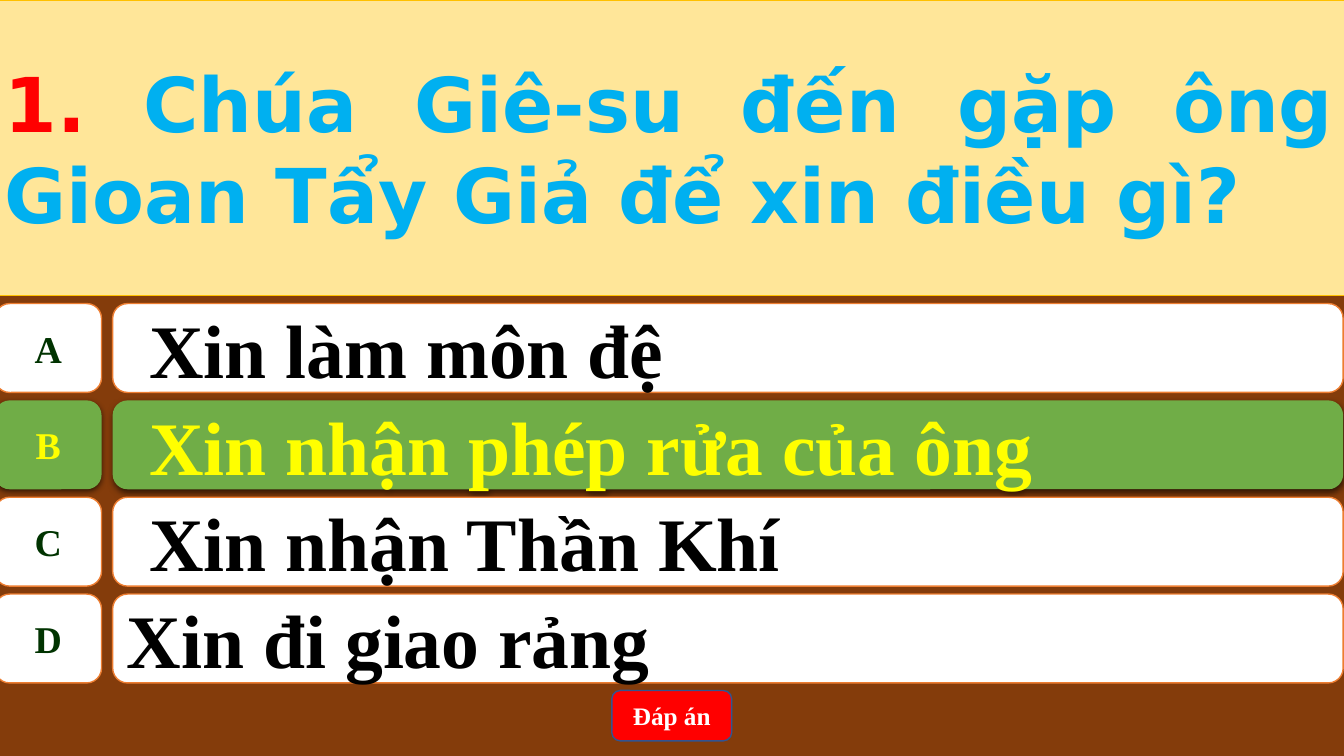
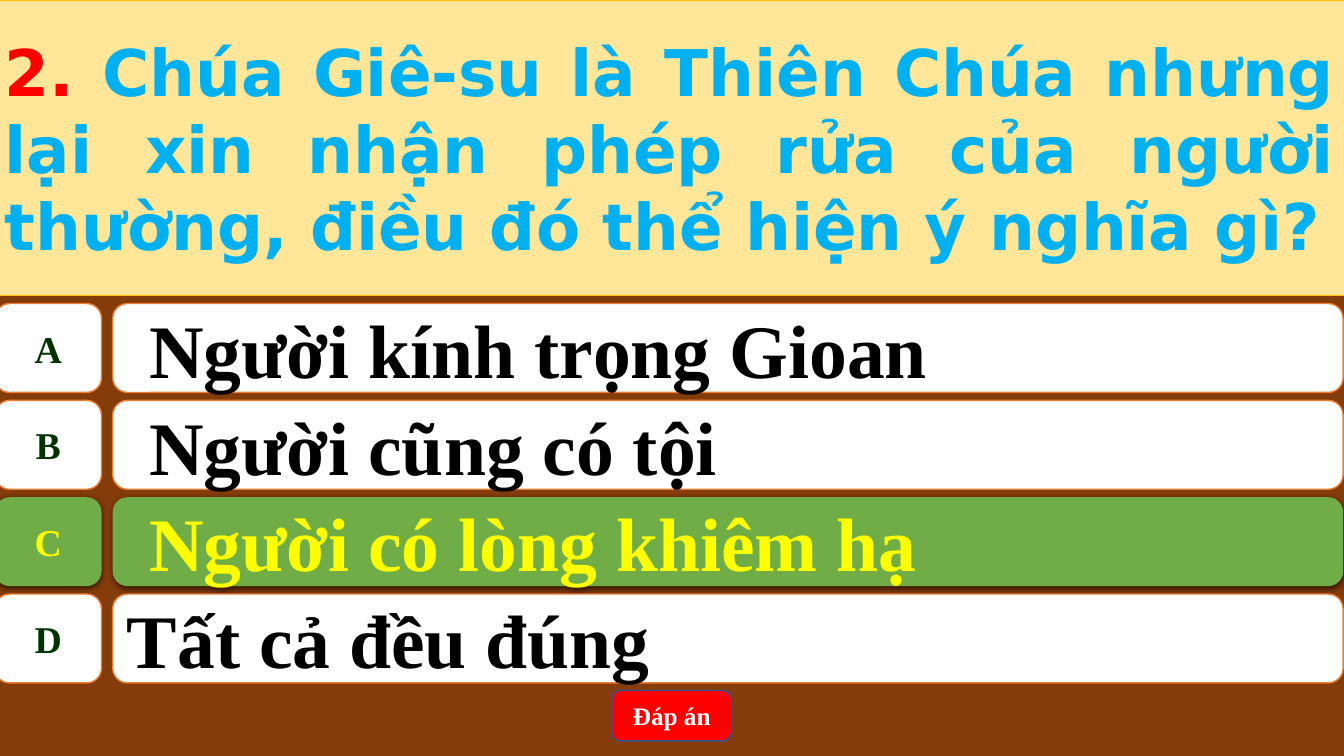
from pptx import Presentation
from pptx.dml.color import RGBColor
from pptx.enum.shapes import MSO_SHAPE
from pptx.enum.text import MSO_ANCHOR, MSO_AUTO_SIZE, PP_ALIGN
from pptx.oxml import parse_xml
from pptx.util import Cm, Pt

BADGE = MSO_SHAPE.FLOWCHART_ALTERNATE_PROCESS
ROUNDED = MSO_SHAPE.ROUNDED_RECTANGLE
MIDDLE = MSO_ANCHOR.MIDDLE
NO_FIT = MSO_AUTO_SIZE.NONE
LEFT, CENTER, JUSTIFY = PP_ALIGN.LEFT, PP_ALIGN.CENTER, PP_ALIGN.JUSTIFY

COLORS = {
    "board": "843C0B", "band": "FFE699", "band_line": "FFC000",
    "number": "FF0000", "question": "00B0F0",
    "card": "FFFFFF", "card_line": "ED7D31", "letter": "003300", "answer": "000000",
    "right": "70AD47", "right_text": "FFFF00",
    "button": "FF0000", "button_line": "325491", "button_text": "FFFFFF",
}
TITLE_FONT, BODY_FONT = "DejaVu Sans", "Times New Roman"
EDGE = -0.13
ROW_TOP, ROW_STEP, ROW_HEIGHT = 7.65, 2.44, 2.24
SHADOW = (
    '<a:outerShdw xmlns:a="http://schemas.openxmlformats.org/drawingml/2006/main" '
    'blurRad="57150" dist="19050" dir="5400000" algn="ctr" rotWithShape="0">'
    '<a:srgbClr val="000000"><a:alpha val="63000"/></a:srgbClr></a:outerShdw>'
)

QUESTIONS = [
    ("1. ", "Chúa Giê-su đến gặp ông Gioan Tẩy Giả để xin điều gì?", 54,
     ["Xin làm môn đệ", "Xin nhận phép rửa của ông", "Xin nhận Thần Khí",
      "Xin đi giao rảng"], "B"),
    ("2. ", "Chúa Giê-su là Thiên Chúa nhưng lại xin nhận phép rửa của người "
     "thường, điều đó thể hiện ý nghĩa gì?", 46,
     ["Người kính trọng Gioan", "Người cũng có tội", "Người có lòng khiêm hạ",
      "Tất cả đều đúng"], "C"),
]


class Quiz:
    """Holds the quiz style and draws the elements of the current slide."""

    def __init__(self):
        self.prs = Presentation()
        self.prs.slide_width, self.prs.slide_height = Cm(33.87), Cm(19.05)
        self.layout = self.prs.slide_layouts[5]
        self.paint(self.layout.background.fill, "board")
        self.s = None

    def new_slide(self):
        self.s = self.prs.slides.add_slide(self.layout)

    def paint(self, fill, color):
        fill.solid()
        fill.fore_color.rgb = RGBColor.from_string(COLORS[color])

    def outline(self, sp, color, width):
        self.paint(sp.line.fill, color)
        sp.line.width = Pt(width)

    def set_text(self, sp, runs, size, font, align, wrap=True):
        tf = sp.text_frame
        tf.word_wrap, tf.auto_size, tf.vertical_anchor = wrap, NO_FIT, MIDDLE
        p = tf.paragraphs[0]
        p.alignment = align
        for text, color in runs:
            r = p.add_run()
            r.text = text
            r.font.name, r.font.size, r.font.bold = font, Pt(size), True
            r.font.color.rgb = RGBColor.from_string(COLORS[color])
        return p

    def box(self, shapes, kind, left, top, width, height, fill, line=None):
        sp = shapes.add_shape(kind, Cm(left), Cm(top), Cm(width), Cm(height))
        sp.shadow.inherit = False
        self.paint(sp.fill, fill)
        if line:
            self.outline(sp, line, 1)
        else:
            sp.line.fill.background()
        return sp

    def question(self, number, text, size):
        sp = self.s.shapes.title
        sp.left, sp.top, sp.width, sp.height = Cm(EDGE), Cm(0), Cm(34.01), Cm(7.44)
        self.paint(sp.fill, "band")
        self.outline(sp, "band_line", 0.5)
        self.set_text(sp, [(number, "number"), (text, "question")], size, TITLE_FONT, JUSTIFY)

    def option(self, row, letter, text, is_right, indented):
        shapes = self.s.shapes.add_group_shape().shapes
        top = ROW_TOP + row * ROW_STEP
        fill, line = ("right", None) if is_right else ("card", "card_line")
        badge = self.box(shapes, BADGE, EDGE, top, 2.69, ROW_HEIGHT, fill, line)
        card = self.box(shapes, ROUNDED, 2.84, top, 31.01, ROW_HEIGHT, fill, line)
        letter_color, text_color = ("right_text",) * 2 if is_right else ("letter", "answer")
        self.set_text(badge, [(letter, letter_color)], 27, BODY_FONT, CENTER, wrap=False)
        p = self.set_text(card, [(text, text_color)], 54, BODY_FONT, LEFT)
        if indented:
            p.level = 1
            pPr = p._p.get_or_add_pPr()
            pPr.set("marL", str(Cm(1.27)))
            pPr.set("indent", str(Cm(-0.71)))
        if is_right:
            for sp in (badge, card):
                sp._element.spPr.find("{*}effectLst").append(parse_xml(SHADOW))

    def button(self, text):
        sp = self.box(self.s.shapes, ROUNDED, 15.42, 17.4, 3.02, 1.27, "button", "button_line")
        self.set_text(sp, [(text, "button_text")], 18, BODY_FONT, CENTER)


def main():
    quiz = Quiz()
    for number, text, size, answers, right in QUESTIONS:
        quiz.new_slide()
        quiz.question(number, text, size)
        for row, (letter, answer) in enumerate(zip("ABCD", answers)):
            quiz.option(row, letter, answer, letter == right, letter != "D")
        quiz.button("Đáp án")
    quiz.prs.save("out.pptx")


if __name__ == "__main__":
    main()
